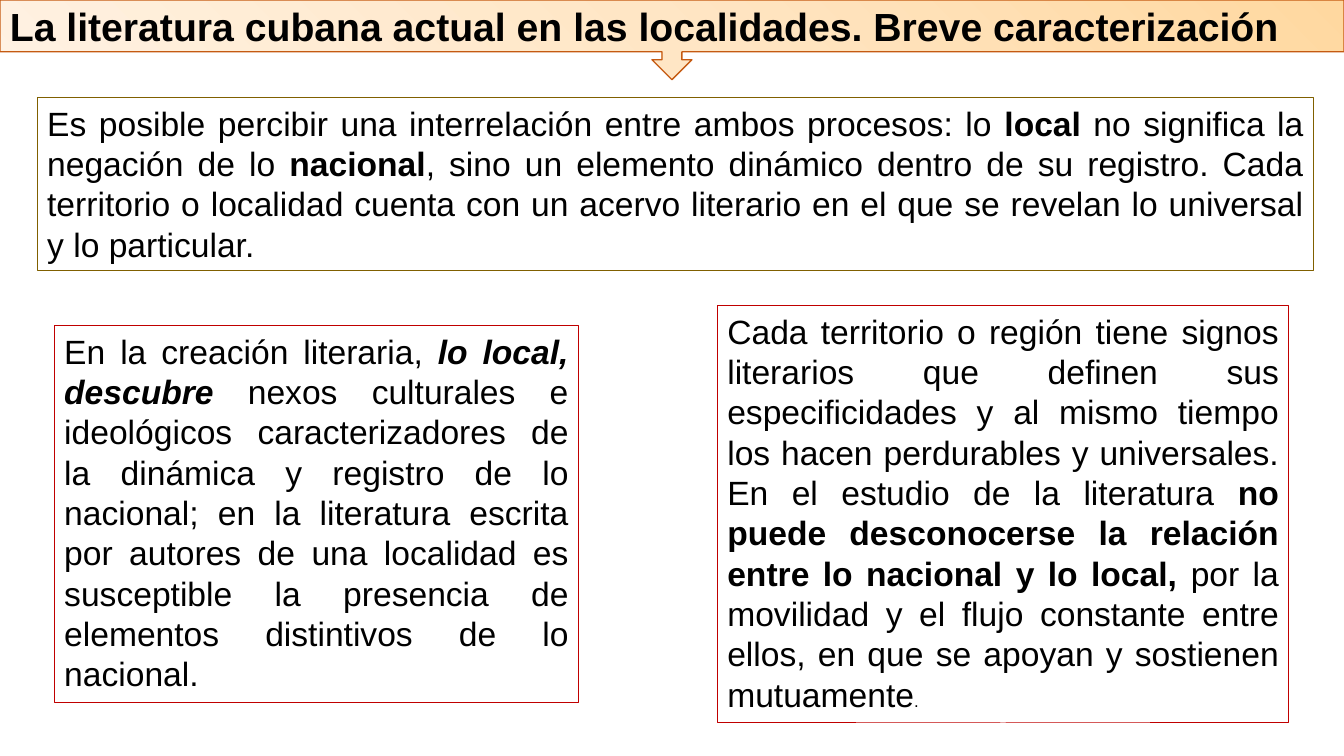
from copy import deepcopy
from dataclasses import dataclass

from pptx import Presentation
from pptx.dml.color import RGBColor
from pptx.enum.shapes import MSO_SHAPE
from pptx.enum.text import MSO_ANCHOR, MSO_AUTO_SIZE, PP_ALIGN
from pptx.oxml.ns import qn
from pptx.util import Cm, Pt


@dataclass(frozen=True)
class Theme:
    font: str = "Arial"
    title_size: float = 28
    body_size: float = 24
    small_size: float = 12
    ink: str = "000000"
    paper: str = "FFFFFF"
    banner_line: str = "C55A11"
    banner_stops: tuple = ("FFD8A0", "FFE6C5", "FFF2E3")
    olive: str = "806000"
    red: str = "C00000"


class LiterarySlide:
    def __init__(self, deck, theme):
        self.theme = theme
        self.slide = deck.slides.add_slide(deck.slide_layouts[5])

    def shape(self, kind, place, line, weight):
        shape = self.slide.shapes.add_shape(kind, *map(Cm, place))
        shape.shadow.inherit = False
        shape.line.color.rgb = RGBColor.from_string(line)
        shape.line.width = Pt(weight)
        return shape

    def format_run(self, run, size, style=""):
        run.font.name = self.theme.font
        run.font.size = Pt(size)
        run.font.bold = "b" in style
        run.font.italic = "i" in style
        run.font.color.rgb = RGBColor.from_string(self.theme.ink)

    def format_frame(self, frame, anchor, auto_size):
        frame.word_wrap = True
        frame.vertical_anchor = anchor
        frame.auto_size = auto_size
        frame.margin_left = frame.margin_right = Cm(0.25)
        frame.margin_top = frame.margin_bottom = Cm(0.13)
        frame.paragraphs[0].alignment = PP_ALIGN.JUSTIFY

    def banner(self, place):
        callout = self.shape(MSO_SHAPE.DOWN_ARROW_CALLOUT, place, self.theme.banner_line, 1)
        callout.fill.gradient()
        callout.fill.gradient_angle = 225
        stop_list = callout._element.spPr.find(qn("a:gradFill")).find(qn("a:gsLst"))
        stop_list.insert(1, deepcopy(stop_list[0]))
        for index, (stop, color) in enumerate(zip(callout.fill.gradient_stops, self.theme.banner_stops)):
            stop.position = index / 2
            stop.color.rgb = RGBColor.from_string(color)

    def title(self, text, place):
        heading = self.slide.shapes.title
        heading.left, heading.top, heading.width, heading.height = map(Cm, place)
        frame = heading.text_frame
        frame.text = text
        self.format_frame(frame, MSO_ANCHOR.MIDDLE, MSO_AUTO_SIZE.NONE)
        self.format_run(frame.paragraphs[0].runs[0], self.theme.title_size, "b")

    def statement(self, place, line, passages, fill=None):
        box = self.shape(MSO_SHAPE.RECTANGLE, place, line, 0.75)
        if fill:
            box.fill.solid()
            box.fill.fore_color.rgb = RGBColor.from_string(fill)
        else:
            box.fill.background()
        frame = box.text_frame
        self.format_frame(frame, MSO_ANCHOR.TOP, MSO_AUTO_SIZE.SHAPE_TO_FIT_TEXT)
        for text, style in passages:
            run = frame.paragraphs[0].add_run()
            run.text = text
            size = self.theme.small_size if "s" in style else self.theme.body_size
            self.format_run(run, size, style)


INTERRELATION = [
    ("Es posible percibir una interrelación entre ambos procesos: lo ", ""),
    ("local", "b"),
    (" no significa la negación de lo ", ""),
    ("nacional", "b"),
    (", sino un elemento dinámico dentro de su registro. Cada territorio o localidad "
     "cuenta con un acervo literario en el que se revelan lo universal y lo particular.", ""),
]
LOCAL_CREATION = [
    ("En la creación literaria, ", ""),
    ("lo local, descubre", "bi"),
    (" nexos culturales e ideológicos caracterizadores de la dinámica y registro de lo "
     "nacional; en la literatura escrita por autores de una localidad es susceptible "
     "la presencia de elementos distintivos de lo nacional.", ""),
]
LITERARY_SIGNS = [
    ("Cada territorio o región tiene signos literarios que definen sus especificidades "
     "y al mismo tiempo los hacen perdurables y universales. En el estudio de la literatura ", ""),
    ("no puede desconocerse la relación entre lo nacional y lo local, ", "b"),
    ("por la movilidad y el flujo constante entre ellos, en que se apoyan y sostienen mutuamente", ""),
    (".", "s"),
]


def main():
    deck = Presentation()
    deck.slide_width, deck.slide_height = Cm(33.87), Cm(19.05)
    theme = Theme()
    page = LiterarySlide(deck, theme)
    page.banner((0, 0, 33.87, 2.01))
    page.title("La literatura cubana actual en las localidades. Breve caracterización",
               (0, 0, 33.87, 1.3))
    title_element = page.slide.shapes.title._element
    title_element.getparent().append(title_element)
    page.statement((0.94, 2.46, 32.16, 4.37), theme.olive, INTERRELATION, theme.paper)
    page.statement((1.37, 8.2, 13.21, 9.5), theme.red, LOCAL_CREATION)
    page.statement((18.08, 7.7, 14.4, 10.52), theme.red, LITERARY_SIGNS)
    deck.save("out.pptx")


if __name__ == "__main__":
    main()
